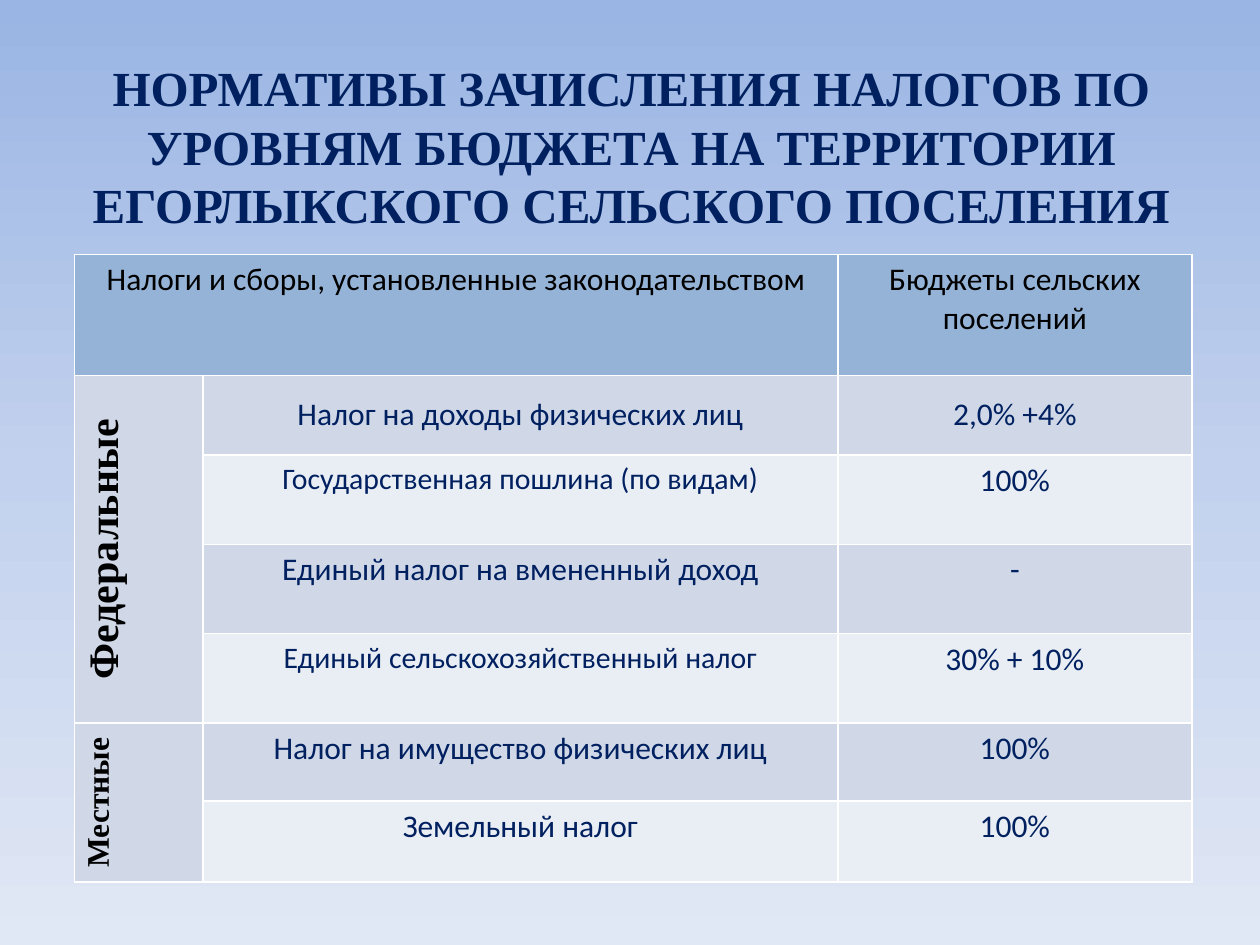
"""Build the slide on tax allocation rates for the settlement budget."""
from copy import deepcopy

from lxml.etree import SubElement
from pptx import Presentation
from pptx.dml.color import RGBColor
from pptx.enum.text import MSO_ANCHOR, MSO_AUTO_SIZE, PP_ALIGN
from pptx.oxml.ns import qn
from pptx.util import Inches, Pt


def color(value):
    """Turn a hex string into a colour."""
    return RGBColor.from_string(value)


def write(frame, text, hue, **font):
    """Fill a text frame with one centred, formatted paragraph."""
    para = frame.paragraphs[0]
    para.alignment = PP_ALIGN.CENTER
    span = para.add_run()
    span.text = text
    span.font.color.rgb = color(hue)
    for name, value in font.items():
        setattr(span.font, name, value)


NAVY, BLACK, WHITE = "002060", "000000", "FFFFFF"
HEADER, DARK, LIGHT = "95B3D7", "D0D8E8", "E9EDF4"
BODY = {"name": "Calibri", "size": Pt(18), "bold": False}
SERIF = {"name": "Times New Roman", "bold": True}

deck = Presentation()
deck.slide_width, deck.slide_height = Inches(10), Inches(7.5)
page = deck.slides.add_slide(deck.slide_layouts[5])

background = page.background.fill
background.gradient()
background.gradient_angle = 270
stop_list = page.element.find(f".//{qn('a:gsLst')}")
stop_list.append(deepcopy(stop_list[-1]))
shades = [(0, "9AB5E4"), (0.5, "C2D1ED"), (1, "E1E8F5")]
for stop, (position, shade) in zip(background.gradient_stops, shades):
    stop.position = position
    stop.color.rgb = color(shade)

title = page.shapes.title
title.left, title.top = Inches(0.51), Inches(0.21)
title.width, title.height = Inches(9), Inches(1.89)
title.text_frame.auto_size = MSO_AUTO_SIZE.NONE
title.text_frame.vertical_anchor = MSO_ANCHOR.MIDDLE
heading = ("НОРМАТИВЫ ЗАЧИСЛЕНИЯ НАЛОГОВ ПО УРОВНЯМ БЮДЖЕТА "
           "НА ТЕРРИТОРИИ ЕГОРЛЫКСКОГО СЕЛЬСКОГО ПОСЕЛЕНИЯ")
write(title.text_frame, heading, NAVY, size=Pt(28), **SERIF)

column_widths = [1.02, 5.04, 2.81]
row_heights = [0.96, 0.63, 0.71, 0.71, 0.71, 0.62, 0.64]
table = page.shapes.add_table(
    len(row_heights), len(column_widths), Inches(0.59), Inches(2.02),
    Inches(sum(column_widths)), Inches(sum(row_heights))).table
for column, width in zip(table.columns, column_widths):
    column.width = Inches(width)
for row, height in zip(table.rows, row_heights):
    row.height = Inches(height)

for index, row in enumerate(table.rows):
    for column, cell in enumerate(row.cells):
        properties = cell._tc.get_or_add_tcPr()
        for side in ("a:lnL", "a:lnR", "a:lnT", "a:lnB"):
            border = SubElement(properties, qn(side), w=str(Pt(1)))
            paint = SubElement(border, qn("a:solidFill"))
            SubElement(paint, qn("a:srgbClr"), val=WHITE)
        band = DARK if index % 2 or column == 0 else LIGHT
        cell.fill.solid()
        cell.fill.fore_color.rgb = color(HEADER if index == 0 else band)

table.cell(0, 0).merge(table.cell(0, 1))
write(table.cell(0, 0).text_frame, "Налоги и сборы, установленные законодательством", BLACK, **BODY)
write(table.cell(0, 2).text_frame, "Бюджеты сельских поселений", BLACK, **BODY)

groups = [("Федеральные", 1, 4, 24, MSO_ANCHOR.TOP),
          ("Местные", 5, 6, 18, MSO_ANCHOR.MIDDLE)]
for name, first, last, size, anchor in groups:
    cell = table.cell(first, 0)
    cell.merge(table.cell(last, 0))
    cell._tc.get_or_add_tcPr().set("vert", "vert270")
    cell.vertical_anchor = anchor
    write(cell.text_frame, name, BLACK, size=Pt(size), **SERIF)

taxes = [
    ("Налог на доходы физических лиц", 18, "2,0% +4%"),
    ("Государственная пошлина (по видам)", 17, "100%"),
    ("Единый налог на вмененный доход", 18, "-"),
    ("Единый сельскохозяйственный налог", 17, "30% + 10%"),
    ("Налог на имущество физических лиц", 18, "100%"),
    ("Земельный налог", 18, "100%"),
]
for index, (tax, size, share) in enumerate(taxes, start=1):
    write(table.cell(index, 1).text_frame, tax, NAVY, **{**BODY, "size": Pt(size)})
    write(table.cell(index, 2).text_frame, share, NAVY, **BODY)
for column in (1, 2):
    table.cell(1, column).vertical_anchor = MSO_ANCHOR.MIDDLE

deck.save("out.pptx")
